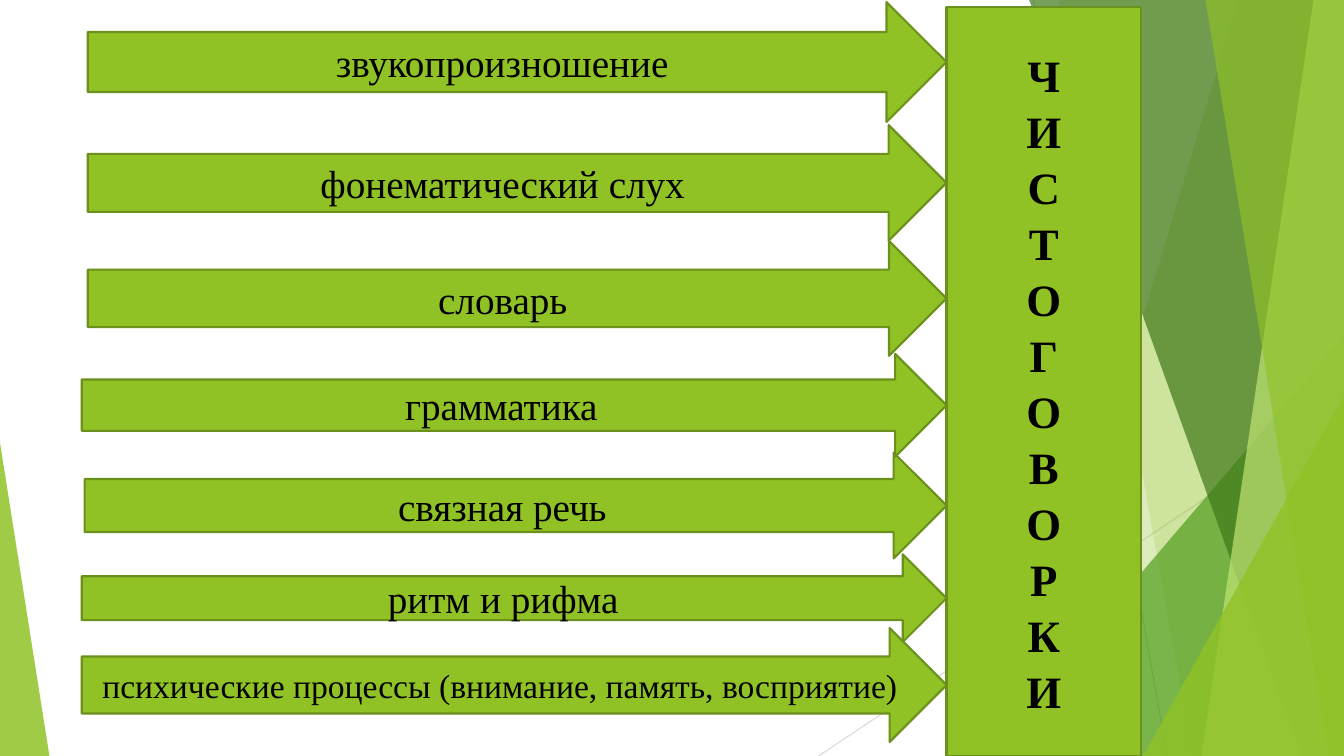
import pptx
import pptx.dml.color
import pptx.enum.shapes
import pptx.enum.text
import pptx.oxml.ns
import pptx.util
from lxml import etree

RGBColor = pptx.dml.color.RGBColor
SHAPE = pptx.enum.shapes.MSO_SHAPE

LIME = RGBColor(0x90, 0xC2, 0x26)
OLIVE = RGBColor(0x6B, 0x90, 0x1C)
GREEN = RGBColor(0x54, 0xA0, 0x21)
FOREST = RGBColor(0x3F, 0x78, 0x19)
PALE_LIME = RGBColor(0xC0, 0xE4, 0x74)
GREY = RGBColor(0xBF, 0xBF, 0xBF)
LIGHT_GREY = RGBColor(0xD9, 0xD9, 0xD9)
BLACK = RGBColor(0, 0, 0)

SLIDE_WIDTH = pptx.util.Inches(13.333)
SLIDE_HEIGHT = pptx.util.Inches(7.5)
FONT = "Times New Roman"

RAYS = [
    ((76.88, 0), (86.85, 100), GREY),
    ((100, 53.73), (60.9, 100), LIGHT_GREY),
]
FACETS = [
    (92.1, 75.3, LIME, 30),
    (78.75, 88.73, LIME, 20),
    (73.28, 44.4, GREEN, 72),
    (76.58, 96.83, FOREST, 70),
    (97.73, 89.4, PALE_LIME, 70),
    (89.7, 98.85, LIME, 65),
    (85.05, 52.4, LIME, 80),
]
CORNERS = (2, 6)

SKILLS = [
    ("звукопроизношение", 6.53, 0.27, 15.87, 28),
    ("фонематический слух", 6.53, 16.53, 15.33, 28),
    ("словарь", 6.53, 31.87, 15.2, 28),
    ("связная речь", 6.3, 59.87, 14, 28),
    ("грамматика", 6.08, 46.8, 13.6, 28),
    ("ритм и рифма", 6.08, 73.33, 11.6, 28),
    ("психические процессы (внимание, память, восприятие)", 6.08, 83.07, 15.07, 24),
]
BANNER_LEFT = 70.43


def across(percent):
    return round(SLIDE_WIDTH * percent / 100)


def down(percent):
    return round(SLIDE_HEIGHT * percent / 100)


def paint(shape, color, opacity=100, outline=None):
    shape.shadow.inherit = False
    shape.fill.solid()
    shape.fill.fore_color.rgb = color
    if opacity < 100:
        tint = shape.fill._xPr.find(".//" + pptx.oxml.ns.qn("a:srgbClr"))
        etree.SubElement(tint, pptx.oxml.ns.qn("a:alpha"), val=str(opacity * 1000))
    if outline is None:
        shape.line.fill.background()
    else:
        shape.line.color.rgb = outline
        shape.line.width = pptx.util.Pt(1.5)


def add_preset(slide, kind, left, top, width, height):
    return slide.shapes.add_shape(kind, across(left), down(top), across(width), down(height))


def write(shape, lines, size, bold=False, spacing=None):
    frame = shape.text_frame
    frame.word_wrap = True
    frame.vertical_anchor = pptx.enum.text.MSO_ANCHOR.MIDDLE
    for index, line in enumerate(lines):
        paragraph = frame.paragraphs[0] if index == 0 else frame.add_paragraph()
        paragraph.alignment = pptx.enum.text.PP_ALIGN.CENTER
        paragraph.line_spacing = spacing
        run = paragraph.add_run()
        run.text = line
        run.font.name = FONT
        run.font.size = pptx.util.Pt(size)
        run.font.bold = bold
        run.font.color.rgb = BLACK


def add_ray(slide, start, end, color):
    ray = slide.shapes.add_connector(
        pptx.enum.shapes.MSO_CONNECTOR.STRAIGHT,
        across(start[0]), down(start[1]), across(end[0]), down(end[1]))
    ray.line.color.rgb = color
    ray.line.width = pptx.util.Pt(0.75)
    etree.SubElement(ray._element.spPr, pptx.oxml.ns.qn("a:effectLst"))


def add_corner(slide, left, top, width, height, apex, color, opacity):
    corner = add_preset(slide, SHAPE.ISOSCELES_TRIANGLE, left, top, width, height)
    corner.adjustments[0] = apex
    paint(corner, color, opacity)


def add_facet(slide, top_left, bottom_left, color, opacity):
    outline = slide.shapes.build_freeform(across(top_left), 0)
    outline.add_line_segments([
        (SLIDE_WIDTH, 0), (SLIDE_WIDTH, SLIDE_HEIGHT), (across(bottom_left), SLIDE_HEIGHT)])
    paint(outline.convert_to_shape(), color, opacity)


def add_backdrop(slide):
    for start, end, color in RAYS:
        add_ray(slide, start, end, color)
    for index, (first, second, color, opacity) in enumerate(FACETS):
        if index in CORNERS:
            add_corner(slide, first, second, 100 - first, 100 - second, 1, color, opacity)
        else:
            add_facet(slide, first, second, color, opacity)
    add_corner(slide, 0, 58.53, 3.68, 41.47, 0, LIME, 85)


def add_banner(slide, left, top, width, height):
    banner = add_preset(slide, SHAPE.RECTANGLE, left, top, width, height)
    paint(banner, LIME, outline=OLIVE)
    write(banner, "ЧИСТОГОВОРКИ", 32, bold=True, spacing=1.04)


def add_skill_arrows(slide, right):
    for skill, left, top, height, size in SKILLS:
        arrow = add_preset(slide, SHAPE.RIGHT_ARROW, left, top, right - left, height)
        paint(arrow, LIME, outline=OLIVE)
        write(arrow, [skill], size)


def main():
    deck = pptx.Presentation()
    deck.slide_width = SLIDE_WIDTH
    deck.slide_height = SLIDE_HEIGHT
    slide = deck.slides.add_slide(deck.slide_layouts[6])
    add_backdrop(slide)
    add_banner(slide, BANNER_LEFT, 0.93, 14.48, 99.07)
    add_skill_arrows(slide, BANNER_LEFT)
    deck.save("out.pptx")


if __name__ == "__main__":
    main()
